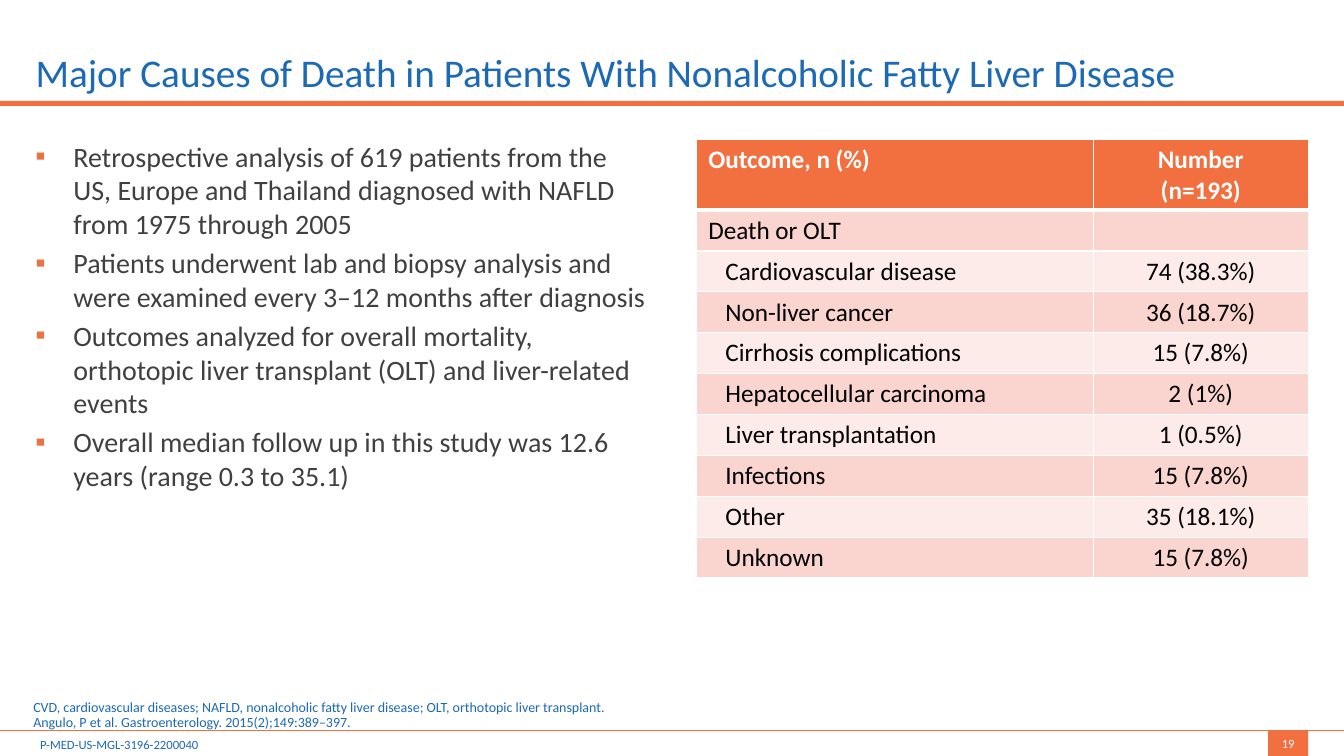
from copy import deepcopy
from dataclasses import dataclass

from lxml.etree import SubElement
from pptx import Presentation
from pptx.dml.color import RGBColor
from pptx.enum.shapes import MSO_CONNECTOR, MSO_SHAPE
from pptx.enum.text import MSO_ANCHOR, PP_ALIGN
from pptx.oxml.ns import qn
from pptx.util import Cm, Pt


@dataclass(frozen=True)
class Theme:
    font: str = "Calibri"
    orange: str = "F26F3F"
    blue: str = "1C69B5"
    grey: str = "404040"
    black: str = "000000"
    white: str = "FFFFFF"
    bands: tuple = ("FAD5CF", "FCEBE8")
    title: int = 28
    body: int = 20
    table: int = 18
    note: int = 10
    footer: int = 9


THEME = Theme()
WIDTH, HEIGHT = 33.87, 19.05

TITLE = "Major Causes of Death in Patients With Nonalcoholic Fatty Liver Disease"
BULLETS = [
    "Retrospective analysis of 619 patients from the US, Europe and Thailand diagnosed with NAFLD from 1975 through 2005",
    "Patients underwent lab and biopsy analysis and were examined every 3–12 months after diagnosis",
    "Outcomes analyzed for overall mortality, orthotopic liver transplant (OLT) and liver-related events",
    "Overall median follow up in this study was 12.6 years (range 0.3 to 35.1)",
]
HEADER = ("Outcome, n (%)", "Number\n(n=193)")
GROUP = "Death or OLT"
OUTCOMES = [
    ("Cardiovascular disease", "74 (38.3%)"),
    ("Non-liver cancer", "36 (18.7%)"),
    ("Cirrhosis complications", "15 (7.8%)"),
    ("Hepatocellular carcinoma", "2 (1%)"),
    ("Liver transplantation", "1 (0.5%)"),
    ("Infections", "15 (7.8%)"),
    ("Other", "35 (18.1%)"),
    ("Unknown", "15 (7.8%)"),
]
NOTE = (
    "CVD, cardiovascular diseases; NAFLD, nonalcoholic fatty liver disease; OLT, orthotopic liver transplant.\n"
    "Angulo, P et al. Gastroenterology. 2015(2);149:389–397."
)


def rgb(color):
    return RGBColor.from_string(color)


def write(p, text, size, color, bold=False, align=PP_ALIGN.LEFT, spacing=None, before=None):
    p.text = text
    p.alignment = align
    if spacing:
        p.line_spacing = spacing
    if before:
        p.space_before = Pt(before)
    for r in p.runs:
        r.font.name = THEME.font
        r.font.size = Pt(size)
        r.font.bold = bold
        r.font.color.rgb = rgb(color)
    for br in p._p.findall(qn("a:br")):
        br.append(deepcopy(p.runs[0]._r.rPr))


def text_frame(s, box, anchor=MSO_ANCHOR.TOP, margins=(0, 0), wrap=True):
    tf = s.shapes.add_textbox(*map(Cm, box)).text_frame
    tf.word_wrap = wrap
    tf.vertical_anchor = anchor
    tf.margin_left = tf.margin_right = Cm(margins[0])
    tf.margin_top = tf.margin_bottom = Cm(margins[1])
    return tf


def add_bar(s, box):
    sp = s.shapes.add_shape(MSO_SHAPE.RECTANGLE, *map(Cm, box))
    sp.shadow.inherit = False
    sp.fill.solid()
    sp.fill.fore_color.rgb = rgb(THEME.orange)
    sp.line.fill.background()
    return sp


def add_bullet(p):
    pPr = p._p.get_or_add_pPr()
    pPr.set("marL", str(Cm(0.95)))
    pPr.set("indent", str(-Cm(0.95)))
    color = SubElement(pPr, qn("a:buClr"))
    SubElement(color, qn("a:srgbClr"), val=THEME.orange)
    SubElement(pPr, qn("a:buFont"), typeface=THEME.font)
    SubElement(pPr, qn("a:buChar"), char="▪")


def add_borders(cell, top, bottom):
    tcPr = cell._tc.get_or_add_tcPr()
    for side, width in (("L", 1), ("R", 1), ("T", top), ("B", bottom)):
        ln = SubElement(tcPr, qn(f"a:ln{side}"), w=str(Pt(width)))
        fill = SubElement(ln, qn("a:solidFill"))
        SubElement(fill, qn("a:srgbClr"), val=THEME.white)


def add_title(s, box):
    left, top, width, height = box
    add_bar(s, (0, top + height, WIDTH, 0.13))
    tf = text_frame(s, box, MSO_ANCHOR.BOTTOM, (0, 0.13))
    write(tf.paragraphs[0], TITLE, THEME.title, THEME.blue, spacing=0.9)


def add_bullets(s, box):
    tf = text_frame(s, box)
    for i, text in enumerate(BULLETS):
        p = tf.add_paragraph() if i else tf.paragraphs[0]
        write(p, text, THEME.body, THEME.grey, before=4 if i else None)
        add_bullet(p)


def add_outcomes(s, box):
    rows = [HEADER, (GROUP, ""), *OUTCOMES]
    table = s.shapes.add_table(len(rows), 2, *map(Cm, box)).table
    table.columns[0].width = Cm(10)
    table.columns[1].width = Cm(box[2] - 10)
    for i, texts in enumerate(rows):
        head = i == 0
        table.rows[i].height = Cm(1.76 if head else 1.03)
        for j, text in enumerate(texts):
            cell = table.cell(i, j)
            indented = i > 1 and j == 0
            cell.margin_left = Cm(0.73 if indented else 0.3)
            cell.margin_right = Cm(0.3)
            cell.margin_top = cell.margin_bottom = Cm(0.13)
            add_borders(cell, 3 if i == 1 else 1, 3 if head else 1)
            cell.fill.solid()
            cell.fill.fore_color.rgb = rgb(THEME.orange if head else THEME.bands[(i - 1) % 2])
            write(
                cell.text_frame.paragraphs[0],
                text,
                THEME.table,
                THEME.white if head else THEME.black,
                bold=head,
                align=PP_ALIGN.CENTER if j else PP_ALIGN.LEFT,
            )


def add_note(s, box):
    tf = text_frame(s, box, MSO_ANCHOR.BOTTOM)
    write(tf.paragraphs[0], NOTE, THEME.note, THEME.blue, spacing=0.9)


def add_footer(s, box):
    left, top, width, height = box
    rule = s.shapes.add_connector(MSO_CONNECTOR.STRAIGHT, Cm(left), Cm(top), Cm(left + width), Cm(top))
    rule.line.color.rgb = rgb(THEME.orange)
    rule.line.width = Pt(1)
    SubElement(rule._element.spPr, qn("a:effectLst"))
    tf = text_frame(s, (left + 0.76, top + 0.02, 4.52, height), margins=(0.25, 0.13), wrap=False)
    write(tf.paragraphs[0], "P-MED-US-MGL-3196-2200040", THEME.footer, THEME.blue)
    tf = add_bar(s, (left + width - 1.91, top, 1.01, height)).text_frame
    tf.vertical_anchor = MSO_ANCHOR.MIDDLE
    write(tf.paragraphs[0], "19", THEME.footer, THEME.white, align=PP_ALIGN.CENTER)


def main():
    prs = Presentation()
    prs.slide_width, prs.slide_height = Cm(WIDTH), Cm(HEIGHT)
    s = prs.slides.add_slide(prs.slide_layouts[6])
    add_title(s, (0.9, 0, 30.15, 2.54))
    add_bullets(s, (0.9, 3.51, 15.42, 13.49))
    add_outcomes(s, (17.55, 3.51, 15.42, 11.03))
    add_note(s, (0.84, 17.65, 28.27, 0.76))
    add_footer(s, (0, 18.41, WIDTH, 0.64))
    prs.save("out.pptx")


if __name__ == "__main__":
    main()
